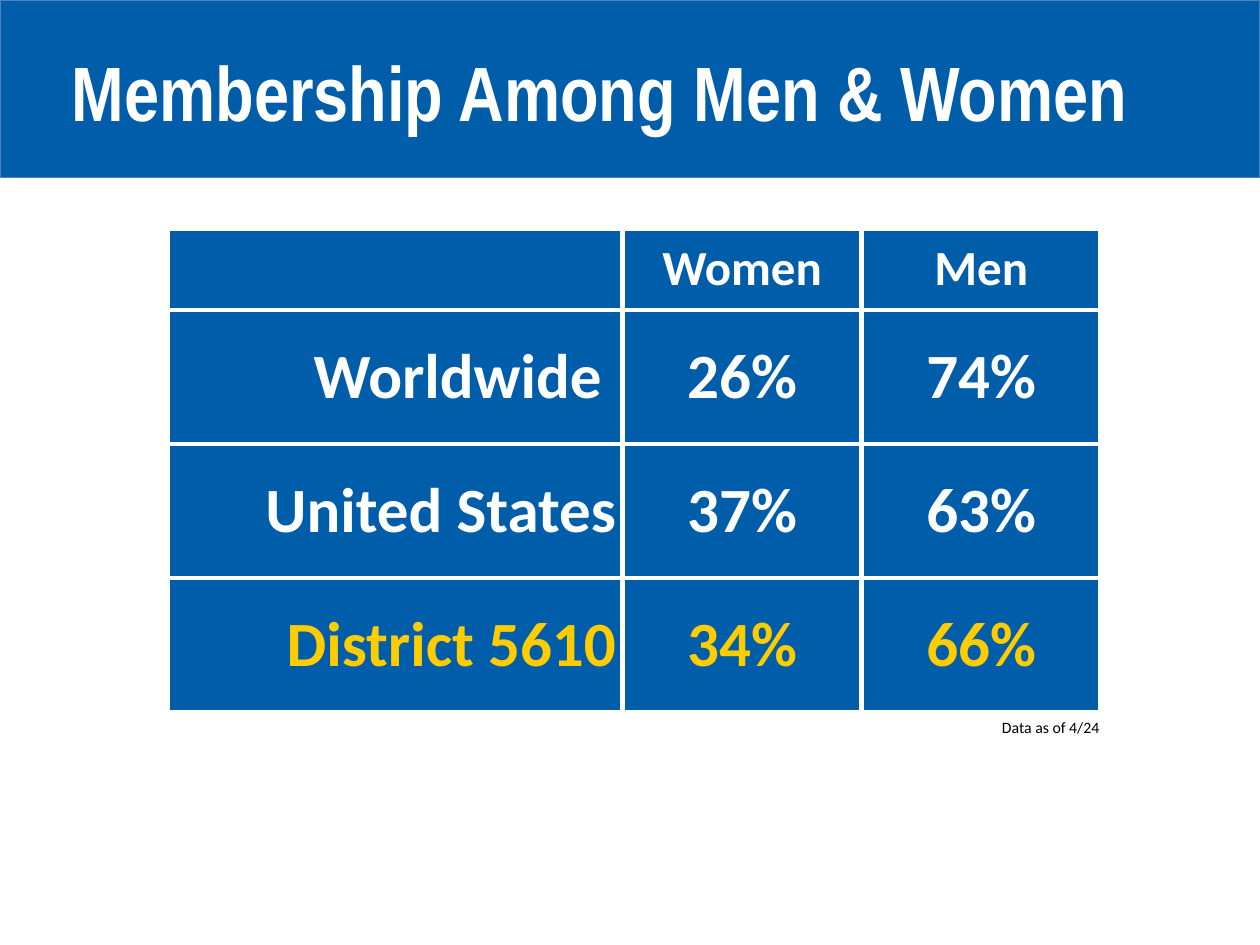
from lxml.etree import SubElement
from pptx import Presentation
from pptx.dml.color import RGBColor
from pptx.enum.shapes import MSO_SHAPE as Shape
from pptx.enum.text import MSO_ANCHOR as Anchor, PP_ALIGN as Align
from pptx.oxml.ns import qn
from pptx.util import Cm, Pt

BLUE = RGBColor(0x00, 0x5D, 0xAA)
EDGE = RGBColor(0x4F, 0x81, 0xBD)
GOLD = RGBColor(0xFF, 0xCC, 0x00)
WHITE = RGBColor(0xFF, 0xFF, 0xFF)
BLACK = RGBColor(0x00, 0x00, 0x00)
PAD = Cm(0.13)
COLS = (9.17, 4.82, 4.82)
ROWS = (1.65, 2.7, 2.7, 2.7)
DATA = (
    ("", "Women", "Men"),
    ("Worldwide", "26%", "74%"),
    ("United States", "37%", "63%"),
    ("District 5610", "34%", "66%"),
)


def style(para, size, color, face="Calibri", bold=True):
    """Set the font of a whole paragraph."""
    font = para.font
    font.name, font.size, font.bold = face, Pt(size), bold
    font.color.rgb = color


def pad(part):
    """Give a cell or text frame the same margin on every side."""
    part.margin_left = part.margin_right = PAD
    part.margin_top = part.margin_bottom = PAD


def label(slide, box, text, *look):
    """Place one line of text in a box."""
    frame = slide.shapes.add_textbox(*map(Cm, box)).text_frame
    frame.word_wrap = True
    pad(frame)
    para = frame.paragraphs[0]
    para.text = text
    style(para, *look)


def header(slide, x, y, w, h):
    """Draw the title band with its heading."""
    band = slide.shapes.add_shape(Shape.RECTANGLE, Cm(x), Cm(y), Cm(w), Cm(h))
    band.shadow.inherit = False
    band.fill.solid()
    band.fill.fore_color.rgb = BLUE
    band.line.color.rgb = EDGE
    band.line.width = Pt(0.75)
    label(slide, (x + 1.32, y + 0.76, w - 1.93, 2.01),
          "Membership Among Men & Women", 44, WHITE, "Arial Narrow")


def border(cell):
    """Draw white rules on all four sides of a cell."""
    props = cell._tc.get_or_add_tcPr()
    for side in ("a:lnL", "a:lnR", "a:lnT", "a:lnB"):
        line = SubElement(props, qn(side), w=str(Pt(3)))
        fill = SubElement(line, qn("a:solidFill"))
        SubElement(fill, qn("a:srgbClr"), val=str(WHITE))


def grid(slide, x, y):
    """Build the membership table and the note below it."""
    w, h = sum(COLS), sum(ROWS)
    table = slide.shapes.add_table(
        len(ROWS), len(COLS), Cm(x), Cm(y), Cm(w), Cm(h)).table
    for col, width in zip(table.columns, COLS):
        col.width = Cm(width)
    for row, height in zip(table.rows, ROWS):
        row.height = Cm(height)
    for r, line in enumerate(DATA):
        for c, text in enumerate(line):
            cell = table.cell(r, c)
            border(cell)
            cell.fill.solid()
            cell.fill.fore_color.rgb = BLUE
            cell.vertical_anchor = Anchor.MIDDLE
            pad(cell)
            para = cell.text_frame.paragraphs[0]
            para.text = text
            para.alignment = Align.CENTER if c else Align.RIGHT
            style(para, 36 if r else 28, GOLD if r == 3 else WHITE)
    table.cell(1, 0).margin_right = Cm(0.42)
    label(slide, (x + w - 2.12, y + h - 0.02, 2.84, 0.58),
          "Data as of 4/24", 9, BLACK, "Calibri", False)


def main():
    """Build and save the slide."""
    deck = Presentation()
    deck.slide_width, deck.slide_height = Cm(25.4), Cm(19.05)
    slide = deck.slides.add_slide(deck.slide_layouts[6])
    header(slide, 0, 0, 25.4, 3.58)
    grid(slide, 3.38, 4.6)
    deck.save("out.pptx")


if __name__ == "__main__":
    main()
